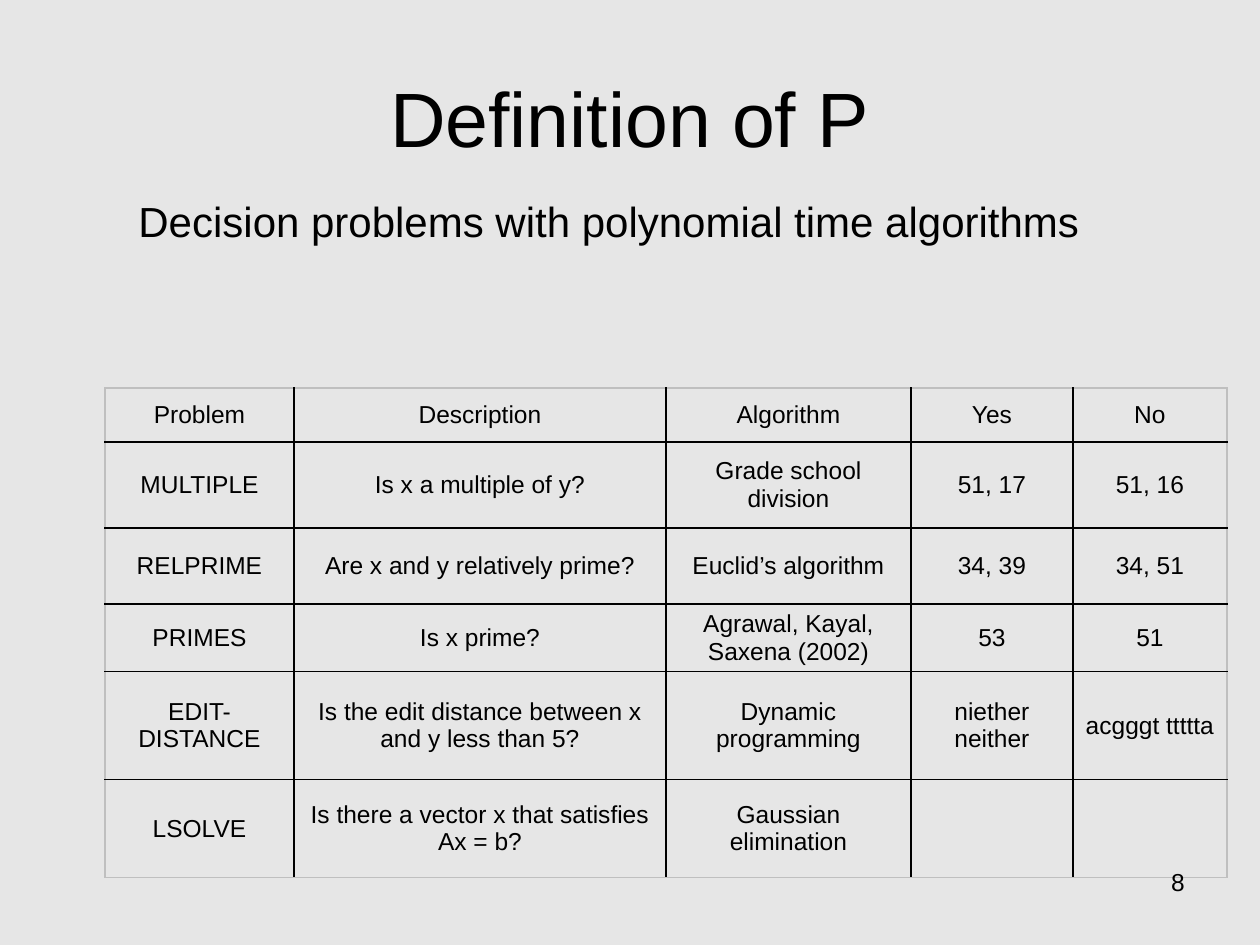
import lxml.etree
import pptx
import pptx.dml.color
import pptx.enum.text
import pptx.oxml.ns
import pptx.util

EMU_PER_PX = 914400 / 126
FONT = "Arial"
COLORS = {"background": "E6E6E6", "text": "000000", "grid": "000000", "frame": "BFBFBF"}
ALIGN = pptx.enum.text.PP_ALIGN
ANCHOR = pptx.enum.text.MSO_ANCHOR

COLUMN_WIDTHS = [189, 372, 245, 162, 154]
ROW_HEIGHTS = [54, 86, 76, 67, 108, 98]
PROBLEMS = [
    ["Problem", "Description", "Algorithm", "Yes", "No"],
    ["MULTIPLE", "Is x a multiple of y?", "Grade school division", "51, 17", "51, 16"],
    ["RELPRIME", "Are x and y relatively prime?", "Euclid’s algorithm", "34, 39", "34, 51"],
    ["PRIMES", "Is x prime?", "Agrawal, Kayal, Saxena (2002)", "53", "51"],
    ["EDIT-DISTANCE", "Is the edit distance between x and y less than 5?",
     "Dynamic programming", "niether neither", "acgggt ttttta"],
    ["LSOLVE", "Is there a vector x that satisfies Ax = b?", "Gaussian elimination", "", ""],
]


def px(length):
    """Turn a length in px into EMU."""
    return pptx.util.Emu(round(length * EMU_PER_PX))


def rgb(name):
    """Look up a named colour."""
    return pptx.dml.color.RGBColor.from_string(COLORS[name])


def write_text(frame, text, size=14, align=ALIGN.LEFT, space_after=0):
    """Write one formatted paragraph into a text frame."""
    frame.word_wrap = True
    paragraph = frame.paragraphs[0]
    paragraph.alignment = align
    paragraph.space_after = pptx.util.Pt(space_after)
    paragraph.font.size = pptx.util.Pt(size)
    run = paragraph.add_run()
    run.text = text
    run.font.name = FONT
    run.font.size = pptx.util.Pt(size)
    run.font.bold = False
    run.font.color.rgb = rgb("text")


def add_title(slide, text, left, top, width, height):
    """Place and fill the title placeholder."""
    title = slide.shapes.title
    title.left, title.top, title.width, title.height = map(px, (left, top, width, height))
    title.text_frame.vertical_anchor = ANCHOR.MIDDLE
    write_text(title.text_frame, text, size=44, align=ALIGN.CENTER)


def add_text_box(slide, text, left, top, width, height, **text_format):
    """Add a text box with one paragraph."""
    box = slide.shapes.add_textbox(*map(px, (left, top, width, height)))
    write_text(box.text_frame, text, **text_format)


def set_border(cell, side, color):
    """Draw one side of a cell."""
    qn = pptx.oxml.ns.qn
    properties = cell._tc.get_or_add_tcPr()
    line = lxml.etree.SubElement(properties, qn(f"a:ln{side}"), w=str(pptx.util.Pt(1)))
    fill = lxml.etree.SubElement(line, qn("a:solidFill"))
    lxml.etree.SubElement(fill, qn("a:srgbClr"), val=COLORS[color])


def add_problem_table(slide, left, top):
    """Add the table of problems with a black grid and a grey frame."""
    row_count, column_count = len(ROW_HEIGHTS), len(COLUMN_WIDTHS)
    size = (sum(COLUMN_WIDTHS), sum(ROW_HEIGHTS))
    table = slide.shapes.add_table(
        row_count, column_count, *map(px, (left, top, *size))).table
    table.first_row = table.horz_banding = False
    for column, width in zip(table.columns, COLUMN_WIDTHS):
        column.width = px(width)
    for row, height in zip(table.rows, ROW_HEIGHTS):
        row.height = px(height)
    for i, texts in enumerate(PROBLEMS):
        for j, text in enumerate(texts):
            cell = table.cell(i, j)
            on_frame = {"L": j == 0, "R": j == column_count - 1,
                        "T": i == 0, "B": i == row_count - 1}
            for side, outer in on_frame.items():
                set_border(cell, side, "frame" if outer else "grid")
            cell.fill.background()
            cell.vertical_anchor = ANCHOR.MIDDLE
            if text:
                write_text(cell.text_frame, text, align=ALIGN.CENTER,
                           space_after=3 if i > 0 and j < 3 else 0)


def main():
    """Build and save the slide."""
    presentation = pptx.Presentation()
    presentation.slide_width, presentation.slide_height = px(1260), px(945)
    slide = presentation.slides.add_slide(presentation.slide_layouts[5])
    slide.background.fill.solid()
    slide.background.fill.fore_color.rgb = rgb("background")
    add_title(slide, "Definition of P", 63, 38, 1134, 157)
    add_problem_table(slide, 105, 388)
    add_text_box(slide, "Decision problems with polynomial time algorithms",
                 126, 189, 1050, 63, size=24)
    add_text_box(slide, "8", 903, 861, 294, 66, align=ALIGN.RIGHT)
    presentation.save("out.pptx")


if __name__ == "__main__":
    main()
